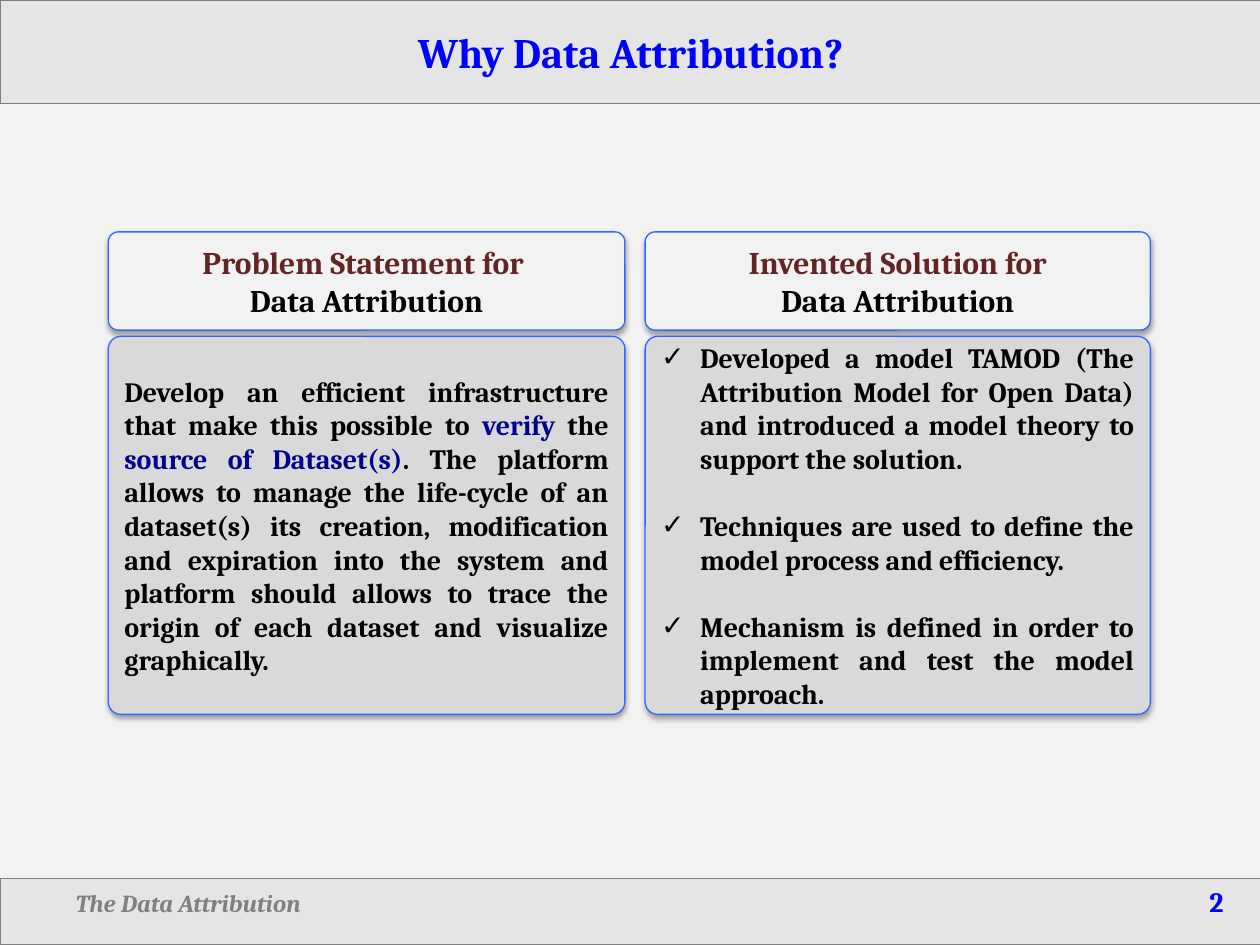
from dataclasses import dataclass

from lxml import etree
from pptx import Presentation
from pptx.dml.color import RGBColor
from pptx.enum.shapes import MSO_SHAPE
from pptx.enum.text import MSO_ANCHOR, PP_ALIGN
from pptx.oxml.ns import qn
from pptx.util import Inches, Pt

RECT, ROUND = MSO_SHAPE.RECTANGLE, MSO_SHAPE.ROUNDED_RECTANGLE
TOP, MIDDLE = MSO_ANCHOR.TOP, MSO_ANCHOR.MIDDLE
LEFT, CENTER, JUSTIFY = PP_ALIGN.LEFT, PP_ALIGN.CENTER, PP_ALIGN.JUSTIFY


@dataclass(frozen=True)
class Theme:
    font: str = "Cambria"
    sign: str = "Arial"
    back: str = "F2F2F2"
    panel: str = "D9D9D9"
    gray: str = "808080"
    edge: str = "3366FF"
    blue: str = "0000FF"
    navy: str = "000090"
    brown: str = "632523"
    black: str = "000000"
    title: int = 24
    head: int = 18
    body: int = 16
    foot: int = 14


def add_xml(parent, tag, **attrs):
    return etree.SubElement(parent, qn(tag), {k: str(v) for k, v in attrs.items()})


class Deck:
    def __init__(self, theme):
        self.theme = theme
        self.prs = Presentation()
        self.prs.slide_width, self.prs.slide_height = Inches(10), Inches(7.5)
        self.slide = self.prs.slides.add_slide(self.prs.slide_layouts[6])
        fill = self.slide.background.fill
        fill.solid()
        fill.fore_color.rgb = RGBColor.from_string(theme.back)

    def box(self, kind, place, fill, line, anchor=MIDDLE):
        shape = self.slide.shapes.add_shape(kind, *map(Inches, place))
        shape.shadow.inherit = False
        shape.fill.solid()
        shape.fill.fore_color.rgb = RGBColor.from_string(fill)
        shape.line.color.rgb = RGBColor.from_string(line)
        shape.line.width = Pt(0.75)
        shape.text_frame.word_wrap = True
        shape.text_frame.vertical_anchor = anchor
        return shape

    def band(self, top, height, anchor=MIDDLE):
        theme = self.theme
        shape = self.box(RECT, (0, top, 10.01, height), theme.panel, theme.gray, anchor)
        color = shape.fill._xPr.find(qn("a:solidFill"))[0]
        add_xml(color, "a:alpha", val=50000)
        return shape

    def card(self, place, fill, radius):
        shape = self.box(ROUND, place, fill, self.theme.edge)
        shape.adjustments[0] = radius / place[3]
        effect = shape.element.spPr.find(qn("a:effectLst"))
        shadow = add_xml(effect, "a:outerShdw", blurRad=Pt(3.1), dist=Pt(1.8),
                         dir=90 * 60000, rotWithShape=0)
        color = add_xml(shadow, "a:srgbClr", val=self.theme.black)
        add_xml(color, "a:alpha", val=35000)
        return shape

    def text(self, shape, paras, size, align, check=False):
        """Each paragraph is a list of (words, colour) runs."""
        frame = shape.text_frame
        for i, runs in enumerate(paras):
            para = frame.add_paragraph() if i else frame.paragraphs[0]
            para.alignment = align
            if check:
                self.check(para, first=i == 0)
            para.font.name = self.theme.font
            para.font.size = Pt(size)
            para.font.bold = True
            for words, color in runs:
                run = para.add_run()
                run.text = words
                run.font.color.rgb = RGBColor.from_string(color)
        return frame

    def check(self, para, first):
        if not first:
            para.space_before = Pt(1.2 * self.theme.body)
        props = para._p.get_or_add_pPr()
        props.set("marL", str(Inches(0.31)))
        props.set("indent", str(-Inches(0.31)))
        add_xml(props, "a:buFont", typeface=self.theme.sign)
        add_xml(props, "a:buChar", char="✓")

    def footer(self, shape, label, number):
        theme = self.theme
        frame = shape.text_frame
        frame.margin_left = Inches(0.6)
        para = frame.paragraphs[0]
        para.alignment = LEFT
        para.space_before = Pt(3)
        tabs = add_xml(para._p.get_or_add_pPr(), "a:tabLst")
        add_xml(tabs, "a:tab", pos=Inches(9.11), algn="r")
        para.font.name = theme.font
        para.font.bold = True
        for words, size, color, slant in (
            (label + "\t", theme.foot, theme.gray, True),
            (number, theme.body, theme.blue, False),
        ):
            run = para.add_run()
            run.text = words
            run.font.size = Pt(size)
            run.font.italic = slant
            run.font.color.rgb = RGBColor.from_string(color)


def main():
    theme = Theme()
    deck = Deck(theme)

    # Title and footer bands
    deck.text(deck.band(0, 0.82), [[("Why Data Attribution?", theme.blue)]],
              theme.title, CENTER)
    deck.footer(deck.band(6.97, 0.53, TOP), "The Data Attribution", "2")

    # Card wording
    problem = [[
        ("Develop an efficient infrastructure that make this possible to ", theme.black),
        ("verify", theme.navy),
        (" the ", theme.black),
        ("source of Dataset(s)", theme.navy),
        (". The platform allows to manage the life-cycle of an dataset(s) its "
         "creation, modification and expiration into the system and platform "
         "should allows to trace the origin of each dataset and visualize "
         "graphically.", theme.black),
    ]]
    answer = [[(words, theme.black)] for words in (
        "Developed a model TAMOD (The Attribution Model for Open Data) and "
        "introduced a model theory to support the solution. ",
        "Techniques are used to define the model process and efficiency. ",
        "Mechanism is defined in order to implement and test the model approach. ",
    )]

    # Two columns: a heading card over a body card
    for left, width, head, body, check in (
        (0.86, 4.1, "Problem Statement for ", problem, False),
        (5.12, 4.01, "Invented Solution for", answer, True),
    ):
        top = deck.card((left, 1.84, width, 0.78), theme.back, 0.08)
        deck.text(top, [[(head, theme.brown)], [("Data Attribution", theme.black)]],
                  theme.head, CENTER)
        base = deck.card((left, 2.67, width, 3), theme.panel, 0.1)
        deck.text(base, body, theme.body, JUSTIFY, check)

    deck.prs.save("out.pptx")


if __name__ == "__main__":
    main()
